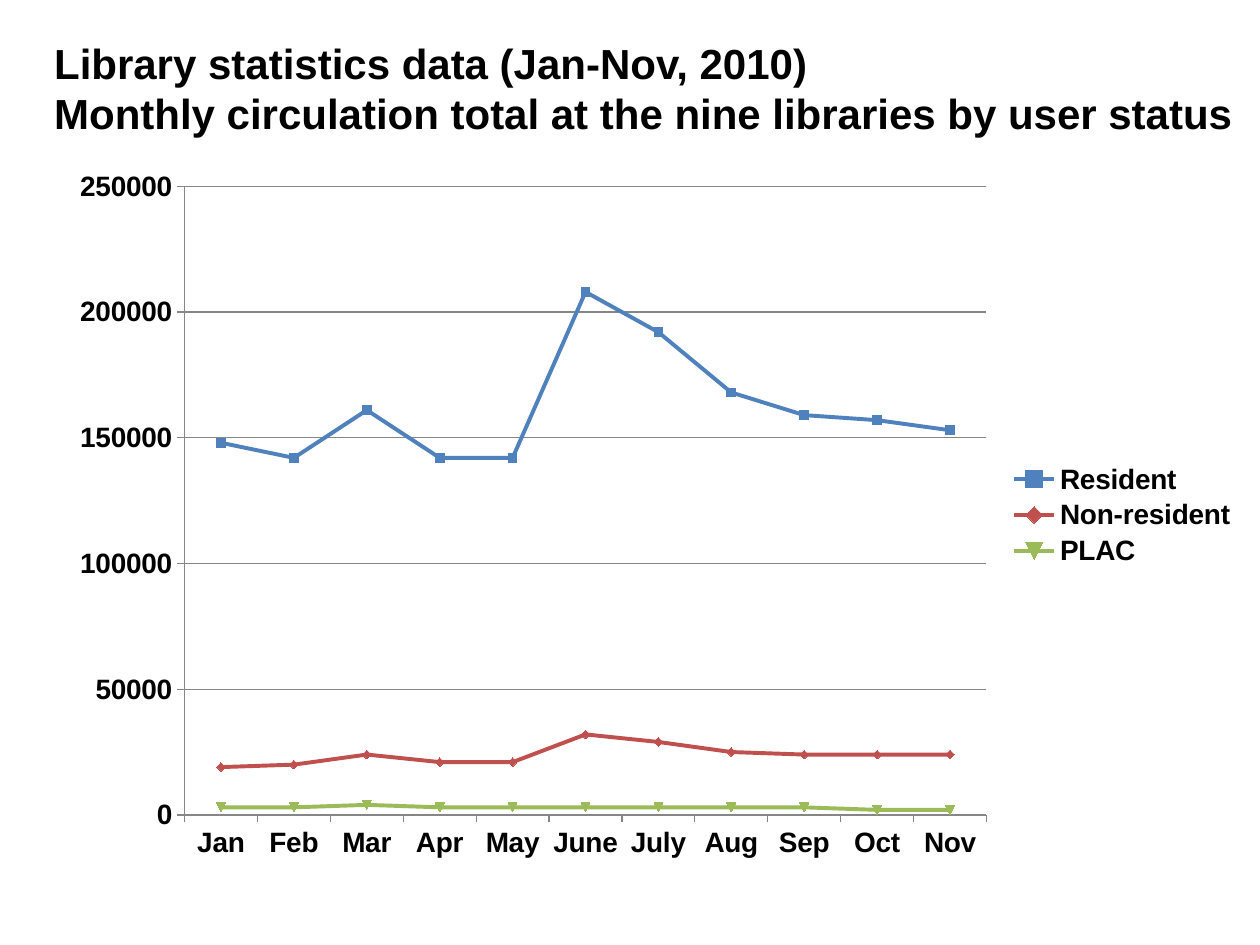
import pptx
import pptx.util
import pptx.chart.data
import pptx.dml.color
import pptx.enum.chart
import pptx.enum.text
import pptx.oxml
import pptx.oxml.ns

SLIDE_W, SLIDE_H = 10, 7.5
FONT = "Arial"
COLORS = {
    "text": "000000",
    "grid": "868686",
    "Resident": "4F81BD",
    "Non-resident": "C0504D",
    "PLAC": "9BBB59",
}
HEADING = [
    "Library statistics data (Jan-Nov, 2010)",
    "Monthly circulation total at the nine libraries by user status",
]
MONTHS = ["Jan", "Feb", "Mar", "Apr", "May", "June", "July", "Aug", "Sep", "Oct", "Nov"]
THOUSANDS = {
    "Resident": [148, 142, 161, 142, 142, 208, 192, 168, 159, 157, 153],
    "Non-resident": [19, 20, 24, 21, 21, 32, 29, 25, 24, 24, 24],
    "PLAC": [3, 3, 4, 3, 3, 3, 3, 3, 3, 2, 2],
}
# Plot area as shares of the chart frame
PLOT_SHARES = {"x": 0.11, "y": 0.04, "w": 0.67, "h": 0.88}


def rgb(name):
    return pptx.dml.color.RGBColor.from_string(COLORS[name])


def box(left, top, width, height):
    """Turn shares of the slide into left, top, width and height."""
    return [pptx.util.Inches(share * side) for share, side in
            zip((left, top, width, height), (SLIDE_W, SLIDE_H) * 2)]


def format_font(font, size, bold=True, color="text"):
    font.name = FONT
    font.size = pptx.util.Pt(size)
    font.bold = bold
    font.color.rgb = rgb(color)


def write_text(frame, lines, size, **style):
    for index, line in enumerate(lines):
        paragraph = frame.add_paragraph() if index else frame.paragraphs[0]
        paragraph.alignment = pptx.enum.text.PP_ALIGN.LEFT
        run = paragraph.add_run()
        run.text = line
        format_font(run.font, size, **style)


def add_heading(slide):
    heading = slide.shapes.title
    heading.left, heading.top, heading.width, heading.height = box(0.033, 0.033, 0.967, 0.175)
    frame = heading.text_frame
    frame.word_wrap = True
    frame.auto_size = pptx.enum.text.MSO_AUTO_SIZE.NONE
    frame.vertical_anchor = pptx.enum.text.MSO_ANCHOR.TOP
    write_text(frame, HEADING, 24)


def place_plot(chart):
    """Fix the inner plot area inside the chart frame."""
    places = "".join(f'<c:{key} val="{share}"/>' for key, share in PLOT_SHARES.items())
    layout = pptx.oxml.parse_xml(
        f'<c:layout {pptx.oxml.ns.nsdecls("c")}><c:manualLayout>'
        '<c:layoutTarget val="inner"/><c:xMode val="edge"/><c:yMode val="edge"/>'
        f'{places}</c:manualLayout></c:layout>')
    plot_area = chart.plots[0]._element.getparent()
    for old in plot_area.findall(pptx.oxml.ns.qn("c:layout")):
        plot_area.remove(old)
    plot_area.insert(0, layout)


def style_line(line, color, width):
    line.color.rgb = rgb(color)
    line.width = pptx.util.Pt(width)


def style_axes(chart):
    for axis in (chart.category_axis, chart.value_axis):
        axis.major_tick_mark = pptx.enum.chart.XL_TICK_MARK.OUTSIDE
        axis.minor_tick_mark = pptx.enum.chart.XL_TICK_MARK.NONE
        style_line(axis.format.line, "grid", 0.75)
    values = chart.value_axis
    values.minimum_scale, values.maximum_scale, values.major_unit = 0, 250000, 50000
    values.has_major_gridlines = True
    style_line(values.major_gridlines.format.line, "grid", 0.75)
    values.tick_labels.number_format = "General"
    values.tick_labels.number_format_is_linked = False


def add_circulation_chart(slide):
    data = pptx.chart.data.CategoryChartData()
    data.categories = MONTHS
    for status, counts in THOUSANDS.items():
        data.add_series(status, [count * 1000 for count in counts])
    chart = slide.shapes.add_chart(
        pptx.enum.chart.XL_CHART_TYPE.LINE_MARKERS, *box(0.042, 0.167, 0.95, 0.756), data).chart
    chart.has_title = False
    format_font(chart.font, 16)
    style_axes(chart)
    place_plot(chart)

    # Legend
    chart.has_legend = True
    chart.legend.position = pptx.enum.chart.XL_LEGEND_POSITION.RIGHT
    chart.legend.include_in_layout = False

    # One line per user status
    plot = chart.plots[0]
    plot.vary_by_categories = False
    for status in plot.series:
        status.smooth = False
        style_line(status.format.line, status.name, 2.25)
        status.marker.size = 5
        status.marker.format.fill.solid()
        status.marker.format.fill.fore_color.rgb = rgb(status.name)
        style_line(status.marker.format.line, status.name, 0.75)


def main():
    deck = pptx.Presentation()
    deck.slide_width = pptx.util.Inches(SLIDE_W)
    deck.slide_height = pptx.util.Inches(SLIDE_H)
    slide = deck.slides.add_slide(deck.slide_layouts.get_by_name("Title Only"))
    add_heading(slide)
    add_circulation_chart(slide)
    deck.save("out.pptx")


if __name__ == "__main__":
    main()
